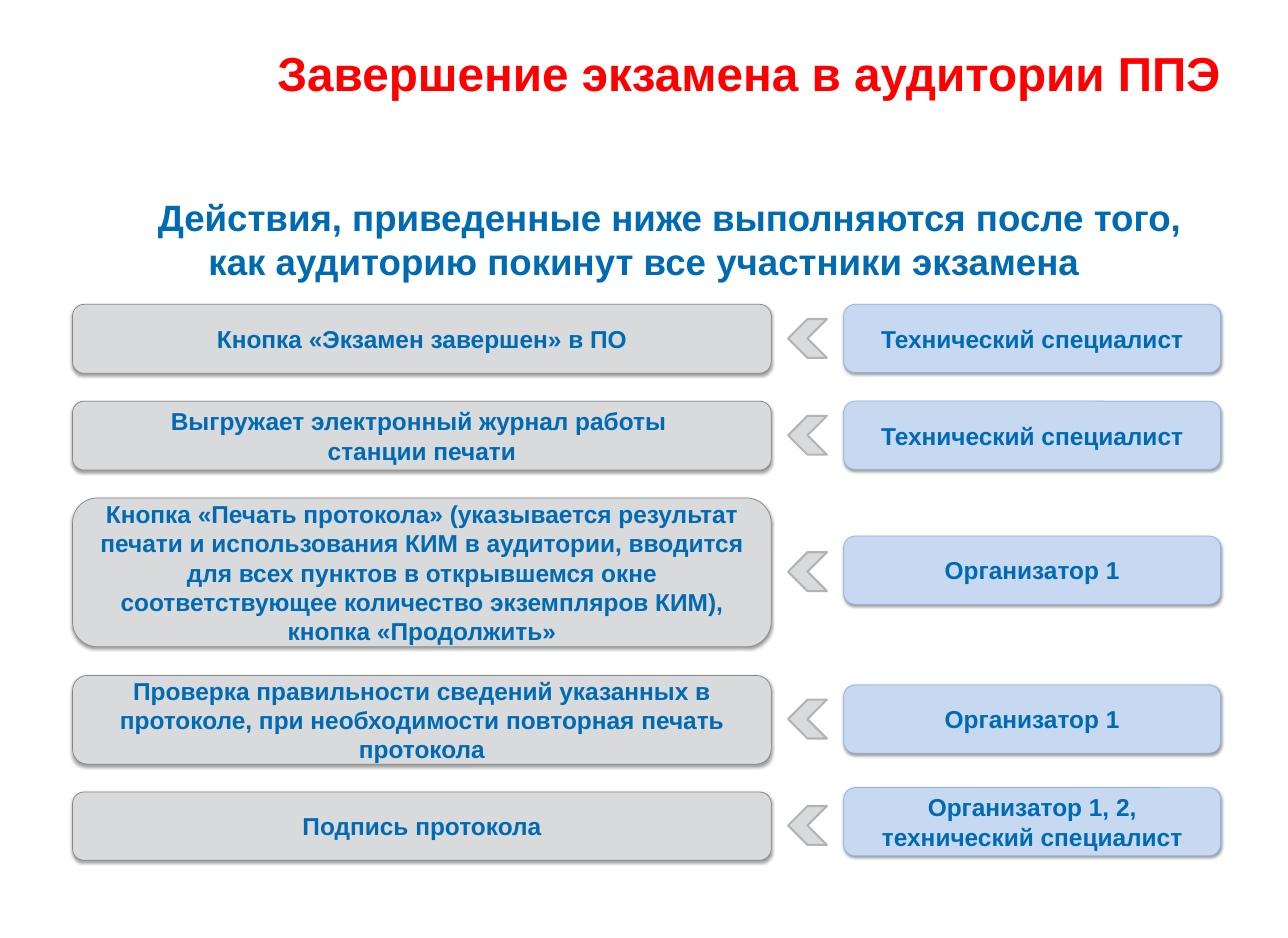
from lxml import etree
from pptx import Presentation
from pptx.dml.color import RGBColor
from pptx.enum.shapes import MSO_SHAPE as Kind
from pptx.enum.text import MSO_ANCHOR as Anchor, MSO_AUTO_SIZE as Fit, PP_ALIGN as Align
from pptx.oxml import parse_xml
from pptx.oxml.ns import nsdecls
from pptx.util import Pt

UNIT = 9144
BLUE, RED = "006AB3", "FF0000"
GREY, SKY = "D9DADB", "C6D9F1"
ROWS = [
    (415, 94, ["Кнопка «Экзамен завершен» в ПО"], 415, "Технический специалист"),
    (547, 94, ["Выгружает электронный журнал работы ", "станции печати"],
     547, "Технический специалист"),
    (679, 203, ["Кнопка «Печать протокола» (указывается результат печати и использования "
                "КИМ в аудитории, вводится для всех пунктов в открывшемся окне "
                "соответствующее количество экземпляров КИМ), кнопка «Продолжить»"],
     731, "Организатор 1"),
    (921, 121, ["Проверка правильности сведений указанных в протоколе, при необходимости "
                "повторная печать протокола"], 934, "Организатор 1"),
    (1080, 93, ["Подпись протокола"], 1074, "Организатор 1, 2, технический специалист"),
]


def px(n):
    return n * UNIT


def tint(code):
    return RGBColor.from_string(code)


class Deck:
    face = "Arial"

    def __init__(self, wide, high):
        self.file = Presentation()
        self.file.slide_width, self.file.slide_height = px(wide), px(high)
        self.slide = self.file.slides.add_slide(self.file.slide_layouts[5])

    def text(self, frame, lines, size, ink, anchor):
        frame.word_wrap = True
        frame.auto_size = Fit.NONE
        frame.vertical_anchor = anchor
        for i, line in enumerate(lines):
            para = frame.add_paragraph() if i else frame.paragraphs[0]
            para.alignment = Align.CENTER
            run = para.add_run()
            run.text = line
            font = run.font
            font.name, font.size, font.bold = self.face, Pt(size), True
            font.color.rgb = tint(ink)

    def pad(self, frame):
        frame.margin_left = frame.margin_right = px(19)
        frame.margin_top = frame.margin_bottom = px(9)

    def title(self, x, y, w, h, text):
        head = self.slide.shapes.title
        head.left, head.top, head.width, head.height = map(px, (x, y, w, h))
        self.pad(head.text_frame)
        self.text(head.text_frame, [text], 46.8, RED, Anchor.MIDDLE)

    def lead(self, x, y, w, h, text):
        frame = self.slide.shapes.add_textbox(*map(px, (x, y, w, h))).text_frame
        self.pad(frame)
        self.text(frame, [text], 36, BLUE, Anchor.TOP)
        props = frame.paragraphs[0]._p.get_or_add_pPr()
        props.set("marL", str(px(9)))
        props.set("indent", str(px(70)))

    def shape(self, kind, x, y, w, h, fill, edge, width):
        item = self.slide.shapes.add_shape(kind, *map(px, (x, y, w, h)))
        item.shadow.inherit = False
        item.fill.solid()
        item.fill.fore_color.rgb = tint(fill)
        item.line.color.rgb = tint(edge)
        item.line.width = Pt(width)
        return item

    def card(self, x, y, w, h, lines, fill, edge):
        item = self.shape(Kind.ROUNDED_RECTANGLE, x, y, w, h, fill, edge, 0.75)
        shade = parse_xml(
            f'<a:outerShdw {nsdecls("a")} blurRad="40000" dist="20000" dir="5400000" '
            'rotWithShape="0"><a:srgbClr val="000000"><a:alpha val="38000"/>'
            '</a:srgbClr></a:outerShdw>')
        item._element.spPr.find(etree.QName(shade.nsmap["a"], "effectLst")).append(shade)
        self.text(item.text_frame, lines, 24, BLUE, Anchor.MIDDLE)

    def arrow(self, x, y, size):
        item = self.shape(Kind.CHEVRON, x, y, size, size, GREY, "B1B3B4", 2)
        item.rotation = 180


def main():
    deck = Deck(1757, 1279)
    deck.title(351, 16, 1342, 165, "Завершение экзамена в аудитории ППЭ ")
    deck.lead(83, 257, 1582, 844,
              "Действия, приведенные ниже выполняются после того, "
              "как аудиторию покинут все участники экзамена")
    for top, high, step, level, role in ROWS:
        deck.card(99, top, 953, high, step, GREY, "87888A")
        deck.card(1151, level, 514, 93, [role], SKY, "8EB4E3")
        deck.arrow(1075, top + high // 2 - 27, 53)
    deck.file.save("out.pptx")


if __name__ == "__main__":
    main()
